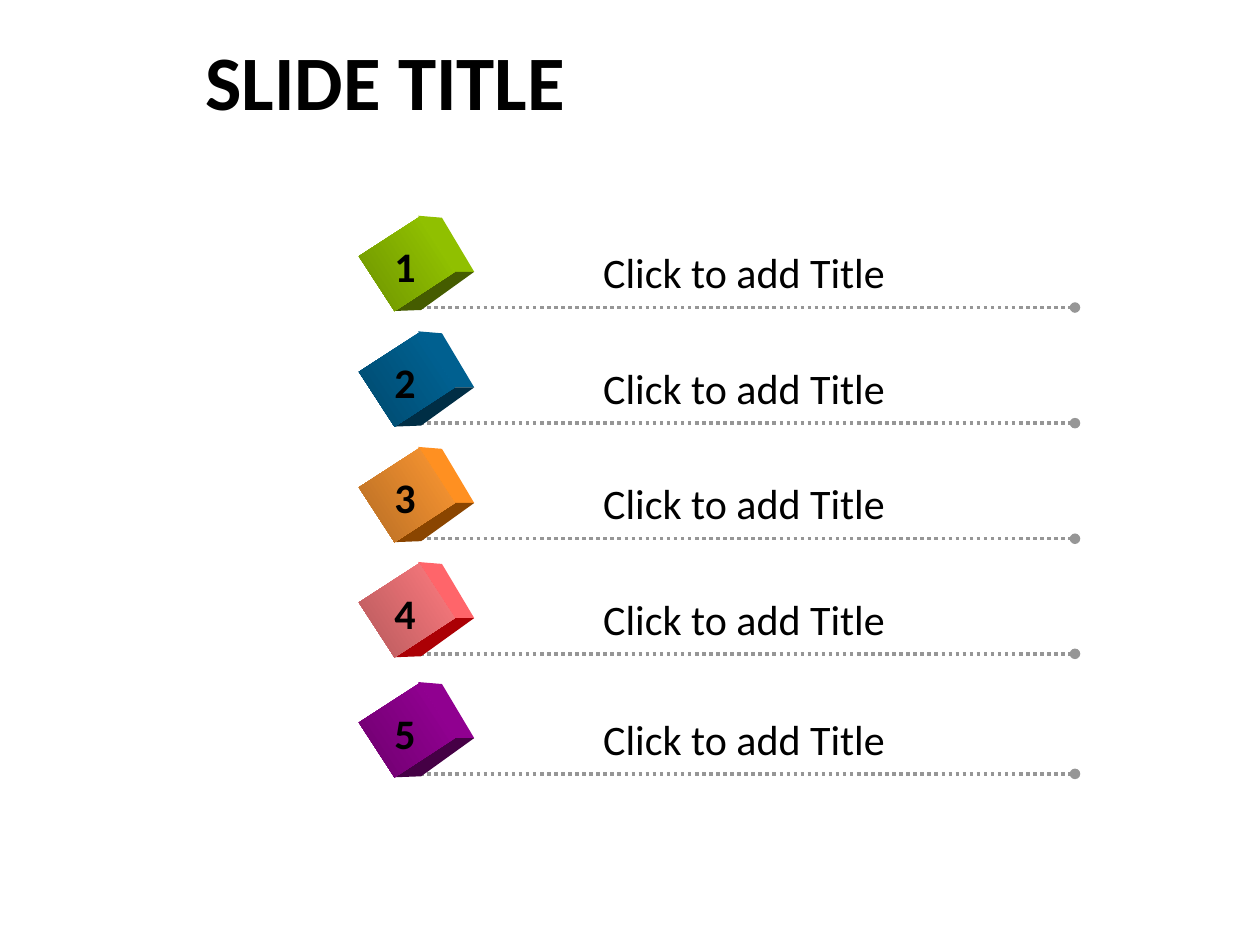
from lxml.etree import SubElement
from pptx import Presentation
from pptx.dml.color import RGBColor as RGB
from pptx.enum.dml import MSO_LINE as Dash
from pptx.enum.shapes import MSO_CONNECTOR as Wire, MSO_SHAPE as Kind
from pptx.enum.text import MSO_ANCHOR as Anchor, MSO_AUTO_SIZE as Fit, PP_ALIGN as Align
from pptx.oxml.ns import qn
from pptx.util import Cm, Pt

BLACK = RGB(0x00, 0x00, 0x00)
GREY = RGB(0x96, 0x96, 0x96)
# Light and dark end of each cube's front
GREEN = RGB(0x99, 0xCC, 0x00), RGB(0x6D, 0x92, 0x00)
BLUE = RGB(0x00, 0x66, 0x99), RGB(0x00, 0x49, 0x6D)
ORANGE = RGB(0xFF, 0x99, 0x33), RGB(0xB6, 0x6D, 0x24)
PINK = RGB(0xFF, 0x7C, 0x80), RGB(0xB6, 0x59, 0x5C)
PURPLE = RGB(0x99, 0x00, 0x99), RGB(0x6D, 0x00, 0x6D)

FONT = "Calibri"
LEFT = 7.2
ROWS = [(4.35, GREEN), (6.68, BLUE), (9.01, ORANGE), (11.33, PINK), (13.75, PURPLE)]

# Cube sides: brightness and corners, in cm from the row's corner
SIDES = [
    (-0.06, [(1.23, 0), (1.71, 0.04), (2.36, 1.13), (1.95, 1.13)]),
    (-0.55, [(1.95, 1.13), (2.36, 1.13), (1.29, 1.9), (0.76, 1.92)]),
]


def style(para, size, bold=False):
    for run in para.runs:
        font = run.font
        font.name, font.size, font.bold = FONT, Pt(size), bold
        font.color.rgb = BLACK


def add_title(slide, x, y, wide, high):
    title = slide.shapes.title
    title.left, title.top = Cm(x), Cm(y)
    title.width, title.height = Cm(wide), Cm(high)
    frame = title.text_frame
    frame.text = "SLIDE TITLE"
    frame.vertical_anchor = Anchor.MIDDLE
    para = frame.paragraphs[0]
    para.alignment = Align.LEFT
    para.line_spacing = 0.9
    style(para, 44, True)


def add_rule(shapes, x, y, wide):
    """Dotted line that ends in a dot."""
    rule = shapes.add_connector(Wire.STRAIGHT, Cm(x), Cm(y), Cm(x + wide), Cm(y))
    rule.line.color.rgb = GREY
    rule.line.width = Pt(2)
    rule.line.dash_style = Dash.ROUND_DOT
    SubElement(rule.get_or_add_ln(), qn("a:tailEnd"), type="oval")
    SubElement(rule._element.spPr, qn("a:effectLst"))


def add_cube(shapes, x, y, light, dark):
    for shade, spots in SIDES:
        spots = [(Cm(x + dx), Cm(y + dy)) for dx, dy in spots]
        pen = shapes.build_freeform(*spots[0])
        pen.add_line_segments(spots[1:])
        side = pen.convert_to_shape()
        side.fill.solid()
        side.fill.fore_color.rgb = light
        side.fill.fore_color.brightness = shade
        side.line.fill.background()
        side.shadow.inherit = False
    front = shapes.add_shape(Kind.RECTANGLE, Cm(x + 0.34), Cm(y + 0.25), Cm(1.32), Cm(1.45))
    front.rotation = 57
    front.fill.gradient()
    front.fill.gradient_angle = 270
    for stop, tone in zip(front.fill.gradient_stops, (light, dark)):
        stop.color.rgb = tone
    front.line.fill.background()
    front.shadow.inherit = False


def add_label(shapes, text, x, y, wide, bold=False):
    frame = shapes.add_textbox(Cm(x), Cm(y), Cm(wide), Cm(1.3)).text_frame
    frame.text = text
    frame.word_wrap = False
    frame.auto_size = Fit.SHAPE_TO_FIT_TEXT
    style(frame.paragraphs[0], 24, bold)


def add_row(slide, num, x, y, tones):
    shapes = slide.shapes.add_group_shape().shapes
    add_rule(shapes, x + 1.13, y + 1.85, 13.34)
    add_cube(shapes, x, y, *tones)
    add_label(shapes, "Click to add Title", x + 4.71, y + 0.5, 6.25)
    add_label(shapes, str(num), x + 0.5, y + 0.38, 0.94, True)


def main():
    deck = Presentation()
    deck.slide_width, deck.slide_height = Cm(25.4), Cm(19.05)
    slide = deck.slides.add_slide(deck.slide_layouts[5])
    add_title(slide, 3.89, 0.48, 20.98, 2.49)
    for num, (top, tones) in enumerate(ROWS, 1):
        add_row(slide, num, LEFT, top, tones)
    deck.save("out.pptx")


if __name__ == "__main__":
    main()
